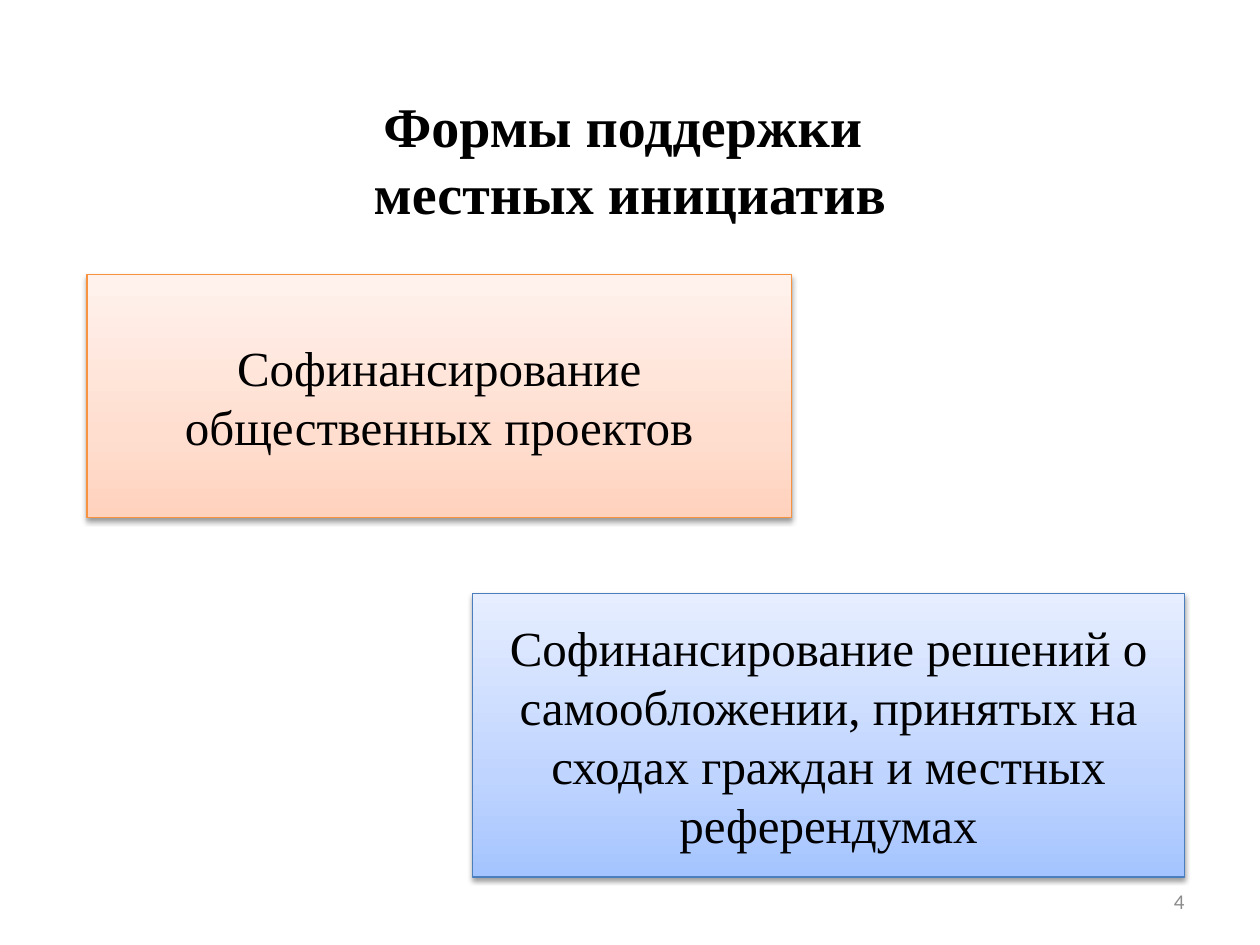
from lxml import etree
from pptx import Presentation
from pptx.dml.color import RGBColor
from pptx.enum.shapes import MSO_SHAPE
from pptx.enum.text import MSO_ANCHOR, PP_ALIGN
from pptx.oxml import parse_xml
from pptx.oxml.ns import nsdecls, qn
from pptx.util import Inches, Pt

COLORS = {
    "text": "000000",
    "number": "8C8C8C",
    "orange_line": "F69240",
    "blue_line": "4B7EBC",
}
# Gradient stops at 0, 35 and 100 percent, from bottom to top
GRADIENTS = {
    "orange": ("FFD2BD", "FFDED0", "FFF2ED"),
    "blue": ("A4C4FF", "BFD4FF", "E6EEFF"),
}
STOPS = (0, 35, 100)
SERIF = "Times New Roman"


def write_text(shape, text, size, font=SERIF, color="text", bold=False,
               align=PP_ALIGN.CENTER):
    frame = shape.text_frame
    frame.word_wrap = True
    frame.vertical_anchor = MSO_ANCHOR.MIDDLE
    para = frame.paragraphs[0]
    para.text = text
    para.alignment = align
    para.font.name = font
    para.font.size = Pt(size)
    para.font.bold = bold
    para.font.color.rgb = RGBColor.from_string(COLORS[color])


def add_label(page, place, text, size, **style):
    box = page.shapes.add_textbox(*map(Inches, place))
    write_text(box, text, size, **style)


def set_gradient(shape, colors):
    shape.fill.gradient()
    shape.fill.gradient_angle = 90  # counter-clockwise: upwards
    stops = shape.element.spPr.find(qn("a:gradFill")).find(qn("a:gsLst"))
    for stop in list(stops):
        stops.remove(stop)
    for position, color in zip(STOPS, colors):
        stop = etree.SubElement(stops, qn("a:gs"), pos=str(position * 1000))
        etree.SubElement(stop, qn("a:srgbClr"), val=color)


def set_shadow(shape):
    shape.shadow.inherit = False
    effects = shape.element.spPr.find(qn("a:effectLst"))
    effects.append(parse_xml(
        f'<a:outerShdw {nsdecls("a")} blurRad="{Pt(3.1)}" dist="{Pt(1.6)}" '
        'dir="5400000" rotWithShape="0"><a:srgbClr val="000000">'
        '<a:alpha val="38000"/></a:srgbClr></a:outerShdw>'))


def add_card(page, place, text, tone):
    card = page.shapes.add_shape(MSO_SHAPE.RECTANGLE, *map(Inches, place))
    set_gradient(card, GRADIENTS[tone])
    card.line.color.rgb = RGBColor.from_string(COLORS[f"{tone}_line"])
    card.line.width = Pt(0.75)
    set_shadow(card)
    write_text(card, text, 28)


def main():
    deck = Presentation()
    deck.slide_width, deck.slide_height = Inches(10), Inches(7.5)
    page = deck.slides.add_slide(deck.slide_layouts[6])

    # Title
    add_label(page, (0.69, 0.4, 8.62, 1.72),
              "Формы поддержки \vместных инициатив", 32, bold=True)

    # Forms of support
    add_card(page, (0.69, 2.18, 5.59, 1.93),
             "Софинансирование общественных проектов", "orange")
    add_card(page, (3.75, 4.71, 5.65, 2.25),
             "Софинансирование решений о самообложении, принятых на "
             "сходах граждан и местных референдумах", "blue")

    # Page number
    add_label(page, (7.17, 6.95, 2.33, 0.4), "4", 12, font="Calibri",
              color="number", align=PP_ALIGN.RIGHT)

    deck.save("out.pptx")


if __name__ == "__main__":
    main()
